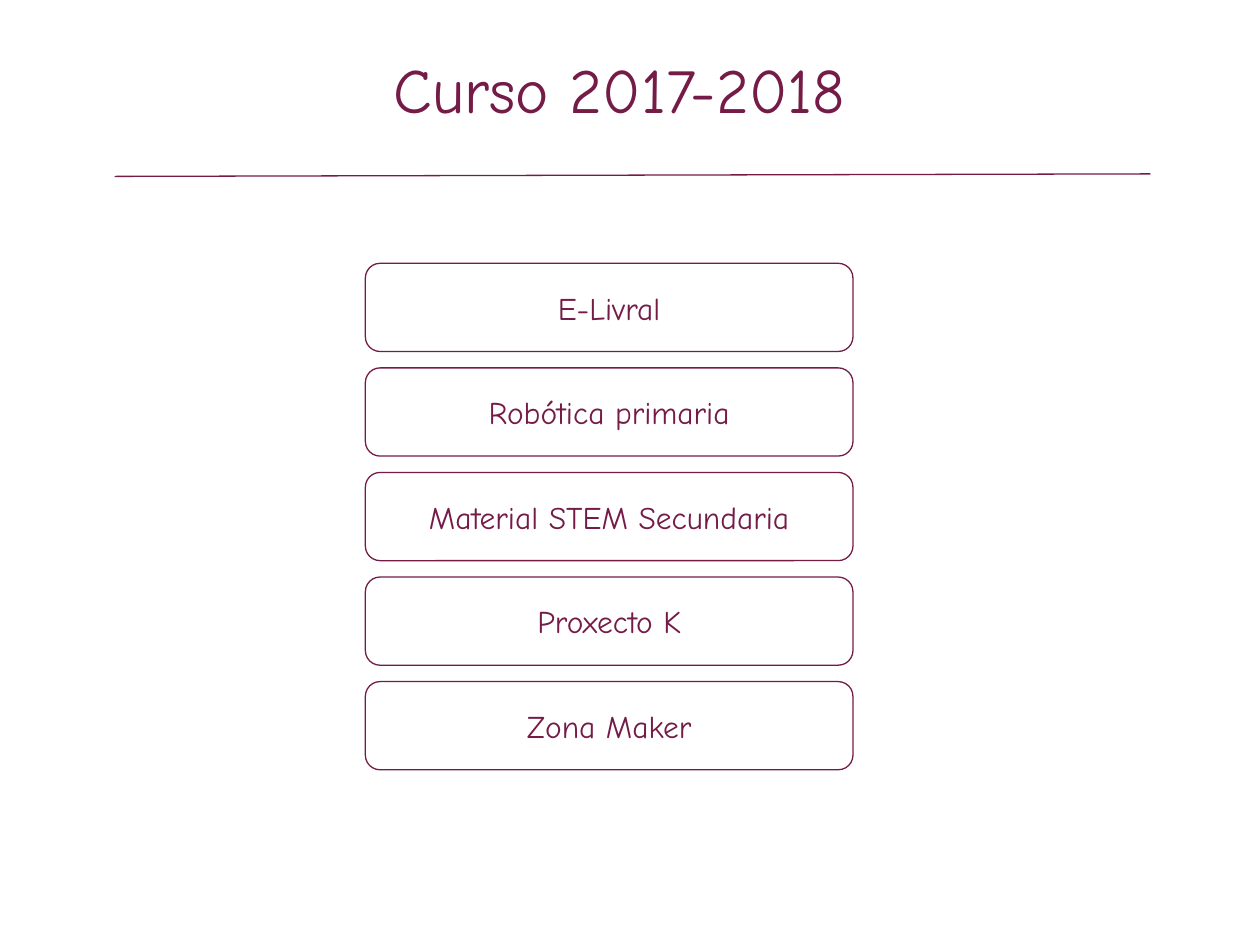
"""Build the course slide: a title, a rule and a column of programme boxes."""
from lxml import etree
from pptx import Presentation
from pptx.dml.color import RGBColor
from pptx.enum.shapes import MSO_CONNECTOR, MSO_SHAPE
from pptx.enum.text import MSO_ANCHOR, PP_ALIGN
from pptx.oxml.ns import qn
from pptx.util import Inches, Pt

PLUM = RGBColor(0x74, 0x1B, 0x47)
FONT = "Comic Neue"
ROUNDED = MSO_SHAPE.ROUNDED_RECTANGLE
STRAIGHT = MSO_CONNECTOR.STRAIGHT
MIDDLE = MSO_ANCHOR.MIDDLE
CENTER = PP_ALIGN.CENTER

PROGRAMMES = [
    "E-Livral",
    "Robótica primaria",
    "Material STEM Secundaria",
    "Proxecto K",
    "Zona Maker",
]
COLUMN_LEFT, COLUMN_WIDTH = Inches(2.9), Inches(3.87)
FIRST_ROW, ROW_HEIGHT, ROW_GAP = Inches(2.09), Inches(0.7), Inches(0.13)


def write(holder, text, size, vertical_inset):
    frame = holder.text_frame
    frame.text = text
    frame.word_wrap = True
    frame.vertical_anchor = MIDDLE
    frame.margin_left = frame.margin_right = Inches(0.1)
    frame.margin_top = frame.margin_bottom = vertical_inset
    paragraph = frame.paragraphs[0]
    paragraph.alignment = CENTER
    font = paragraph.runs[0].font
    font.name = FONT
    font.size = Pt(size)
    font.color.rgb = PLUM


presentation = Presentation()
presentation.slide_width = Inches(10)
presentation.slide_height = Inches(7.5)
slide = presentation.slides.add_slide(presentation.slide_layouts[6])

for row, programme in enumerate(PROGRAMMES):
    top = FIRST_ROW + row * (ROW_HEIGHT + ROW_GAP)
    box = slide.shapes.add_shape(ROUNDED, COLUMN_LEFT, top, COLUMN_WIDTH, ROW_HEIGHT)
    box.shadow.inherit = False
    box.fill.background()
    box.line.color.rgb = PLUM
    box.line.width = Pt(0.75)
    write(box, programme, 18, Inches(0.1))

title = slide.shapes.add_textbox(Inches(0.83), Inches(0.3), Inches(8.17), Inches(0.8))
write(title, "Curso 2017-2018", 36, Inches(0.05))

rule = slide.shapes.add_connector(
    STRAIGHT, Inches(0.91), Inches(1.4), Inches(9.13), Inches(1.38)
)
rule.line.color.rgb = PLUM
rule.line.width = Pt(0.75)
etree.SubElement(rule.element.spPr, qn("a:effectLst"))

presentation.save("out.pptx")
